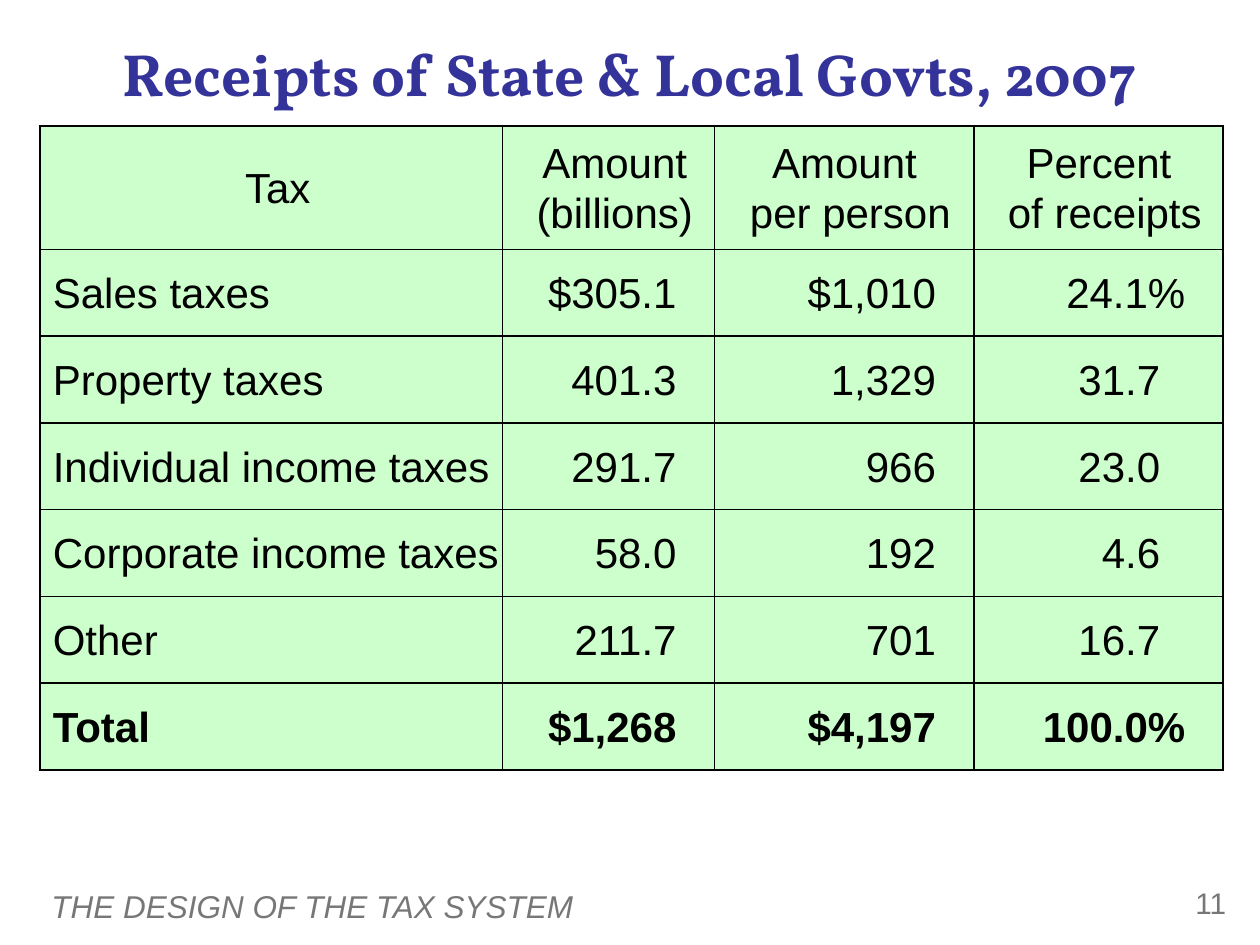
from lxml import etree
from pptx import Presentation
from pptx.dml.color import RGBColor
from pptx.enum.text import MSO_ANCHOR, PP_ALIGN
from pptx.oxml.ns import qn
from pptx.util import Pt

# Content
TITLE = "Receipts of State & Local Govts, 2007"
FOOTER = "THE DESIGN OF THE TAX SYSTEM"
NUMBER = "11"
ROWS = [
    ("Tax", "Amount (billions)", "Amount \nper person", "Percent \nof receipts"),
    ("Sales taxes", "$305.1", "$1,010", "24.1%"),
    ("Property taxes", "401.3", "1,329", "31.7"),
    ("Individual income taxes", "291.7", "966", "23.0"),
    ("Corporate income taxes", "58.0", "192", "4.6"),
    ("Other", "211.7", "701", "16.7"),
    ("Total", "$1,268", "$4,197", "100.0%"),
]

# Layout, in points
COLS = (264.2, 121, 148.3, 142.5)
HEAD_H, ROW_H = 70.5, 49.6
TABLE_LEFT, TABLE_TOP = 23, 72


class Theme:
    title_font, body_font = "Vollkorn", "Arial"
    title, ink, muted, cell = (
        RGBColor.from_string(c) for c in ("333399", "000000", "777777", "CCFFCC"))
    title_size, table_size, footer_size, number_size = 34, 24, 18, 17


def style(p, font, size, color, align, bold=False, italic=False):
    p.alignment = align
    f = p.font
    f.name, f.size, f.bold, f.italic = font, Pt(size), bold, italic
    f.color.rgb = color


def add_label(slide, box, label, size, align, anchor, italic=False):
    tf = slide.shapes.add_textbox(*map(Pt, box)).text_frame
    tf.word_wrap, tf.vertical_anchor = True, anchor
    p = tf.paragraphs[0]
    p.text = label
    style(p, Theme.body_font, size, Theme.muted, align, italic=italic)


def add_borders(cell):
    tc_pr = cell._tc.get_or_add_tcPr()
    for side in ("a:lnL", "a:lnR", "a:lnT", "a:lnB"):
        ln = etree.SubElement(tc_pr, qn(side), w=str(Pt(1)))
        fill = etree.SubElement(ln, qn("a:solidFill"))
        etree.SubElement(fill, qn("a:srgbClr"), val=str(Theme.ink))


def right_margin(row, col, value):
    if row == 0 or col == 0:
        return 0
    # Percentages without a sign leave room for it, so the digits line up
    return 36 if col == 3 and not value.endswith("%") else 21.6


def fill_cell(cell, row, col, value):
    add_borders(cell)
    cell.fill.solid()
    cell.fill.fore_color.rgb = Theme.cell
    cell.vertical_anchor = MSO_ANCHOR.MIDDLE
    cell.margin_left, cell.margin_right = Pt(7.2), Pt(right_margin(row, col, value))
    cell.margin_top = cell.margin_bottom = Pt(3.6)
    p = cell.text_frame.paragraphs[0]
    p.text = value
    p.line_spacing = 1.05
    align = PP_ALIGN.CENTER if row == 0 else PP_ALIGN.RIGHT if col else PP_ALIGN.LEFT
    style(p, Theme.body_font, Theme.table_size, Theme.ink, align,
          bold=row == len(ROWS) - 1)


def main():
    prs = Presentation()
    prs.slide_width, prs.slide_height = Pt(720), Pt(540)
    slide = prs.slides.add_slide(prs.slide_layouts[5])

    # Footer and slide number
    add_label(slide, (22.3, 503.3, 577.4, 28.8), FOOTER, Theme.footer_size,
              PP_ALIGN.LEFT, MSO_ANCHOR.MIDDLE, italic=True)
    add_label(slide, (653.8, 501.8, 54, 28.8), NUMBER, Theme.number_size,
              PP_ALIGN.RIGHT, MSO_ANCHOR.TOP)

    # Title
    sp = slide.shapes.title
    sp.left, sp.top, sp.width, sp.height = map(Pt, (36, 15.8, 648, 51.1))
    tf = sp.text_frame
    tf.text, tf.vertical_anchor = TITLE, MSO_ANCHOR.MIDDLE
    style(tf.paragraphs[0], Theme.title_font, Theme.title_size, Theme.title,
          PP_ALIGN.CENTER, bold=True)

    # Table
    heights = [HEAD_H] + [ROW_H] * (len(ROWS) - 1)
    table = slide.shapes.add_table(
        len(ROWS), len(COLS), Pt(TABLE_LEFT), Pt(TABLE_TOP),
        Pt(sum(COLS)), Pt(sum(heights))).table
    for column, width in zip(table.columns, COLS):
        column.width = Pt(width)
    for i, (values, height) in enumerate(zip(ROWS, heights)):
        table.rows[i].height = Pt(height)
        for j, value in enumerate(values):
            fill_cell(table.cell(i, j), i, j, value)

    prs.save("out.pptx")


if __name__ == "__main__":
    main()
